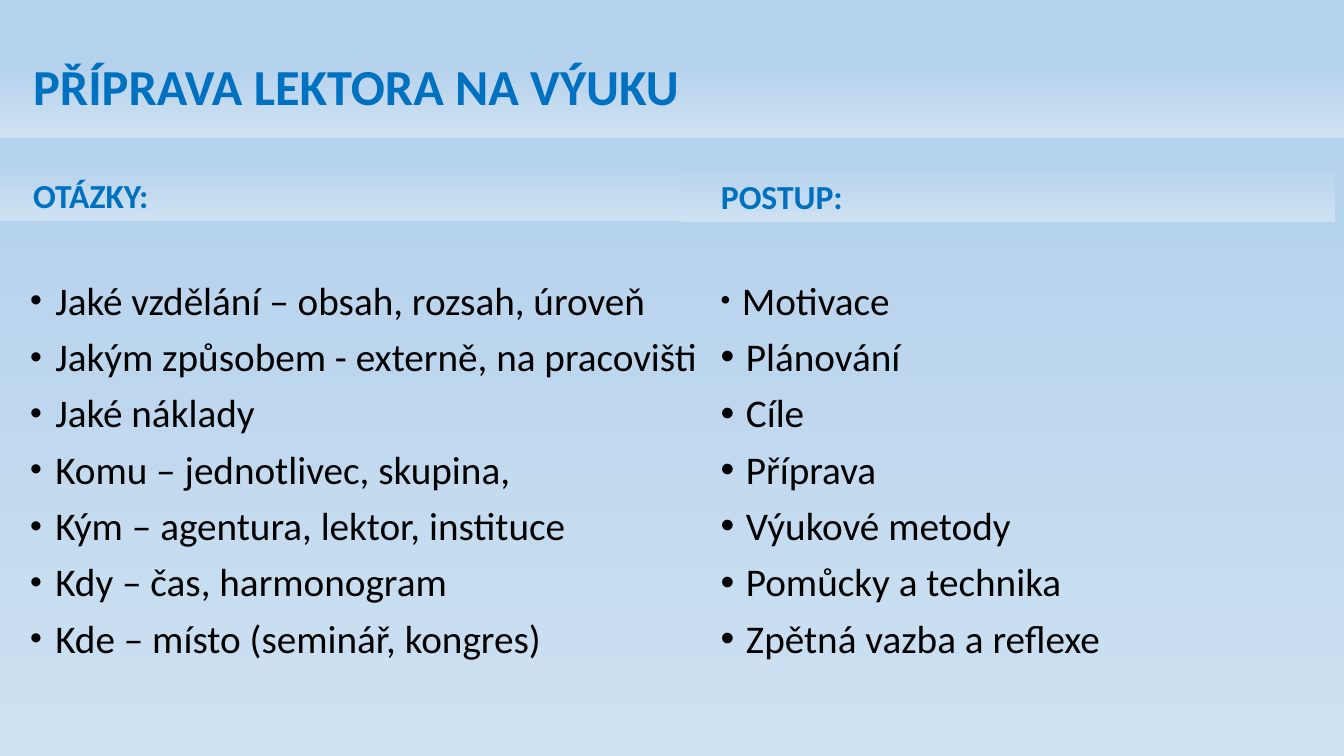
"""Build a slide on how a lecturer prepares for teaching."""
from dataclasses import dataclass

from lxml import etree
from pptx import Presentation
from pptx.dml.color import RGBColor
from pptx.dml.fill import FillFormat
from pptx.enum.shapes import MSO_SHAPE
from pptx.enum.text import MSO_ANCHOR, PP_ALIGN
from pptx.oxml.ns import qn
from pptx.slide import Slide
from pptx.util import Inches, Pt

RECT = MSO_SHAPE.RECTANGLE
LEFT = PP_ALIGN.LEFT
MIDDLE, BOTTOM = MSO_ANCHOR.MIDDLE, MSO_ANCHOR.BOTTOM
FONT = "Calibri"
COLORS = {"sky": "B5D2EC", "pale": "CEE1F2", "head": "0070C0", "text": "000000"}
STOPS = ((0.26, "sky"), (0.99, "pale"))


@dataclass
class Band:
    text: str
    box: tuple[float, float, float, float]
    inset: float
    size: int
    anchor: MSO_ANCHOR
    before: int


@dataclass
class Item:
    text: str
    indent: float = 0.25
    scale: int = 100


@dataclass
class Column:
    box: tuple[float, float, float, float]
    items: list[Item]


BANDS = [
    Band("PŘÍPRAVA LEKTORA NA VÝUKU", (0, 0.4, 13.33, 0.97), 0.33, 36, MIDDLE, 0),
    Band("OTÁZKY:", (0, 1.4, 6.83, 0.79), 0.33, 24, BOTTOM, 10),
    Band("POSTUP:", (6.75, 1.44, 6.49, 0.76), 0.4, 24, BOTTOM, 10),
]
ASKS = [
    "Jaké vzdělání – obsah, rozsah, úroveň",
    "Jakým způsobem - externě, na pracovišti",
    "Jaké náklady",
    "Komu – jednotlivec, skupina,",
    "Kým – agentura, lektor, instituce",
    "Kdy – čas, harmonogram",
    "Kde – místo (seminář, kongres)",
]
STEPS = [
    "Plánování",
    "Cíle",
    "Příprava",
    "Výukové metody",
    "Pomůcky a technika",
    "Zpětná vazba a reflexe",
]
COLUMNS = [
    Column((0.2, 2.74, 7.78, 4.03), [Item(ask, scale=86) for ask in ASKS]),
    Column((7.05, 2.74, 6.11, 4.03),
           [Item("Motivace", 0.21, 71)] + [Item(step) for step in STEPS]),
]


def shade(fill: FillFormat) -> None:
    """Fill with the blue gradient, running from top to bottom."""
    fill.gradient()
    fill.gradient_angle = 270
    for stop, (place, name) in zip(fill.gradient_stops, STOPS):
        stop.position = place
        stop.color.rgb = RGBColor.from_string(COLORS[name])


def style(para, size: int, color: str, bold: bool, before: int) -> None:
    """Set the spacing of a paragraph and the font of its runs."""
    para.alignment = LEFT
    para.line_spacing = 0.9
    para.space_before = Pt(before)
    for run in para.runs:
        run.font.name = FONT
        run.font.size = Pt(size)
        run.font.bold = bold
        run.font.color.rgb = RGBColor.from_string(COLORS[color])


def bullet(para, item: Item) -> None:
    """Give a paragraph a hanging round bullet."""
    props = para._p.get_or_add_pPr()
    props.set("marL", str(Inches(item.indent)))
    props.set("indent", str(-Inches(item.indent)))
    etree.SubElement(props, qn("a:buSzPct"), val=str(item.scale * 1000))
    etree.SubElement(props, qn("a:buFont"), typeface="Arial")
    etree.SubElement(props, qn("a:buChar"), char="•")


def draw_band(slide: Slide, band: Band) -> None:
    """Draw a shaded band with its heading."""
    shape = slide.shapes.add_shape(RECT, *map(Inches, band.box))
    shape.shadow.inherit = False
    shape.line.fill.background()
    shade(shape.fill)
    frame = shape.text_frame
    frame.word_wrap = True
    frame.vertical_anchor = band.anchor
    frame.margin_left = Inches(band.inset)
    frame.text = band.text
    style(frame.paragraphs[0], band.size, "head", True, band.before)


def draw_list(slide: Slide, column: Column) -> None:
    """Draw a column of bulleted items."""
    frame = slide.shapes.add_textbox(*map(Inches, column.box)).text_frame
    frame.word_wrap = True
    frame.text = "\n".join(item.text for item in column.items)
    for para, item in zip(frame.paragraphs, column.items):
        style(para, 28, "text", False, 10)
        bullet(para, item)


def main() -> None:
    """Build and save the slide."""
    deck = Presentation()
    deck.slide_width, deck.slide_height = Inches(13.33), Inches(7.5)
    slide = deck.slides.add_slide(deck.slide_layouts[6])
    shade(slide.background.fill)
    for band in BANDS:
        draw_band(slide, band)
    for column in COLUMNS:
        draw_list(slide, column)
    deck.save("out.pptx")


if __name__ == "__main__":
    main()
